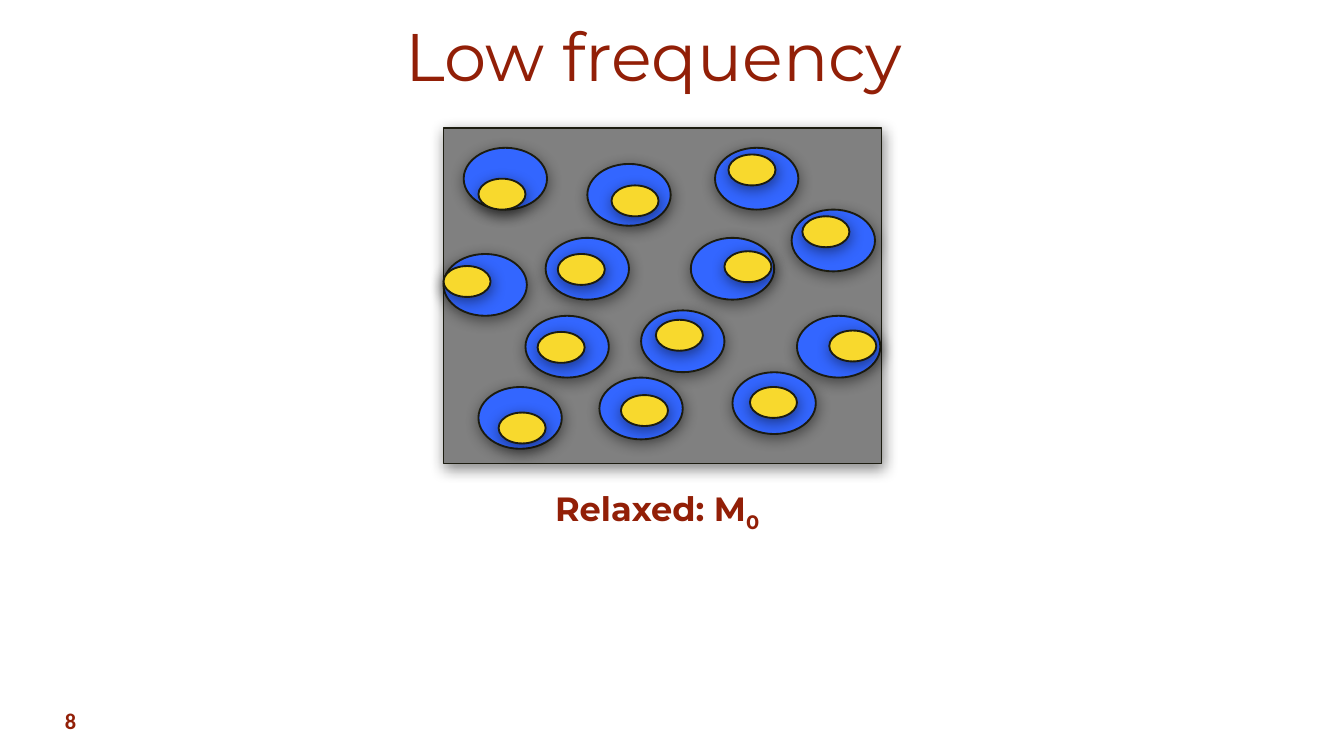
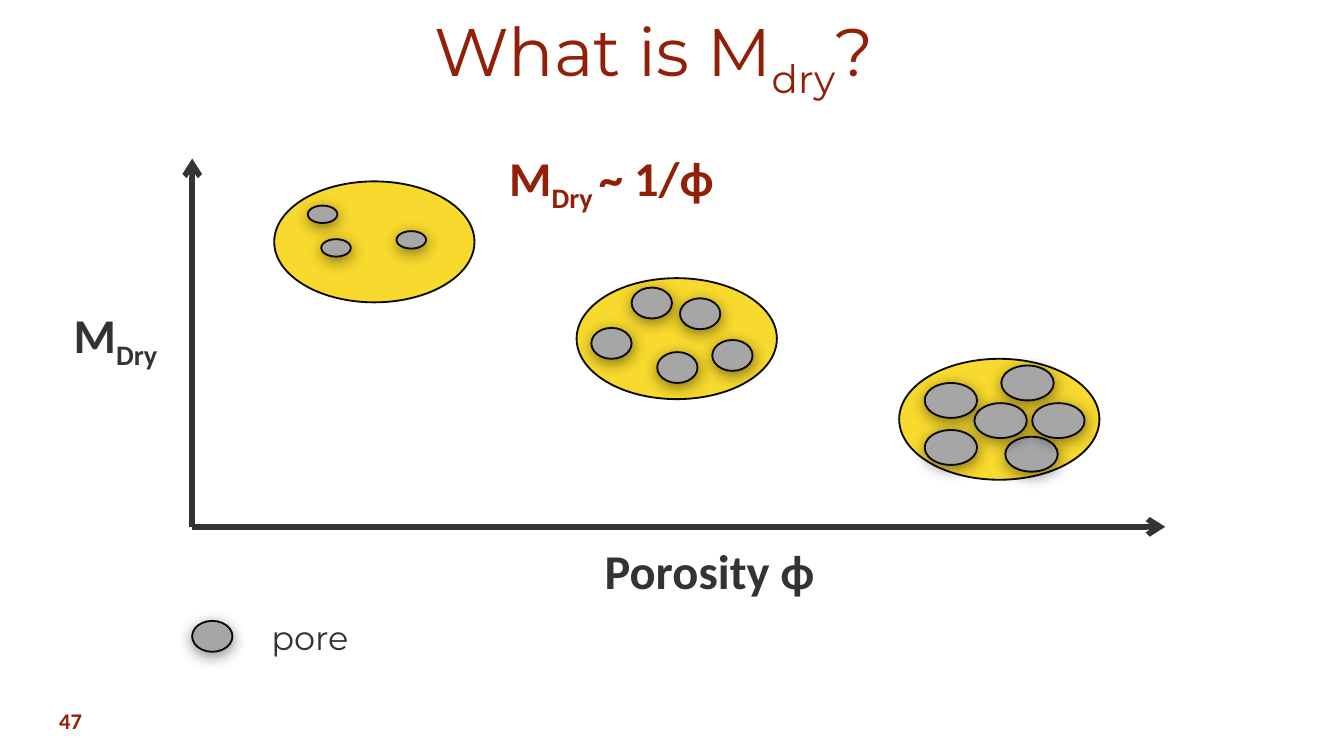
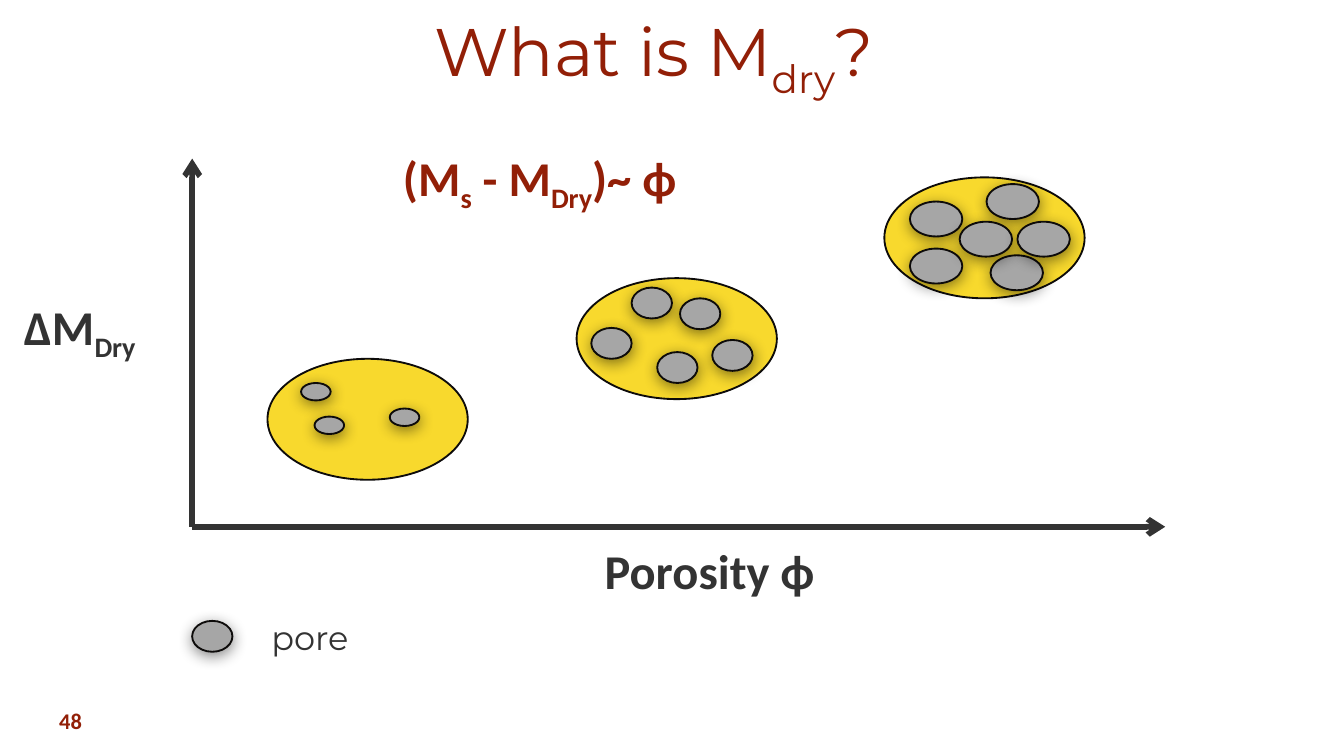
from dataclasses import dataclass

from lxml.etree import SubElement
from pptx import Presentation
from pptx.dml.color import RGBColor
from pptx.enum.shapes import MSO_CONNECTOR, MSO_SHAPE
from pptx.enum.text import MSO_ANCHOR, MSO_AUTO_SIZE, PP_ALIGN
from pptx.oxml.ns import qn
from pptx.util import Inches, Pt

# Grid: square cells, 100 columns across the slide and 56.25 rows down it.
COLUMNS, ROWS = 100, 56.25
CELL = Inches(10) / COLUMNS

RED, DARK, OUTLINE, FRAME_LINE = "921F07", "333333", "0D0B0A", "1C1C10"
YELLOW, BLUE, PORE_GREY, ROCK_GREY = "F8D92D", "3366FF", "A6A6A6", "808080"
HEADING_FONT, LABEL_FONT = "Montserrat", "Calibri"

Size = tuple[float, float]
Point = tuple[float, float]
Box = tuple[float, float, float, float]

TITLE_BOX: Box = (3.8, 0.5, 89.7, 7.2)
NUMBER_BOX: Box = (1.9, 52.1, 6.7, 3)
ROCK_BOX: Box = (33, 9.5, 32.6, 25)
GRAIN_SIZE: Size = (14.9, 9)
BUBBLE_SIZE: Size = (6.2, 4.6)
CORE_SIZE: Size = (3.5, 2.3)
MEDIUM_PORE: Size = (3, 2.3)
ORIGIN: Point = (14.3, 39.2)
AXIS_ENDS: list[Point] = [(86.7, 39.2), (14.3, 11.8)]


@dataclass
class Bubble:
    """A blue bubble and the offset of the yellow core inside it."""
    left: float
    top: float
    core: Point


@dataclass
class Grain:
    """Pores of one size, placed relative to the grain's corner."""
    pore_size: Size
    pores: list[Point]


@dataclass
class Label:
    """Text whose odd-numbered pieces are subscripts."""
    box: Box
    pieces: list[str]
    wrap: bool = False


@dataclass
class Plot:
    number: int
    vertical_label: Label
    relation: Label
    grain_corners: list[Point]


BUBBLES = [
    Bubble(34.5, 11, (1.1, 2.3)), Bubble(43.7, 12.2, (1.8, 1.6)),
    Bubble(40.6, 17.7, (0.9, 1.2)), Bubble(33, 18.9, (0, 0.9)),
    Bubble(53.2, 11, (1, 0.5)), Bubble(39.1, 23.5, (0.9, 1.2)),
    Bubble(47.7, 23.1, (1.1, 0.7)), Bubble(51.4, 17.7, (2.5, 1)),
    Bubble(59.3, 23.5, (2.4, 1.1)), Bubble(35.6, 28.8, (1.5, 1.9)),
    Bubble(44.6, 28.1, (1.6, 1.3)), Bubble(54.5, 27.7, (1.3, 1.1)),
    Bubble(58.9, 15.6, (0.8, 0.5)),
]

GRAINS = [
    Grain((2.2, 1.3), [(2.5, 1.8), (3.5, 4.3), (9.1, 3.7)]),
    Grain(MEDIUM_PORE, [(10.1, 4.6), (6, 5.5), (1.1, 3.7), (4.1, 0.7), (7.7, 1.5)]),
    Grain((3.9, 2.6), [(1.9, 1.8), (7.9, 5.8), (1.9, 5.3), (7.6, 0.5),
                       (5.6, 3.3), (9.9, 3.3)]),
]

PLOTS = [
    Plot(47, Label((4.5, 22.2, 9.8, 5.4), ["M", "Dry"]),
         Label((36.9, 10.5, 24.2, 5.4), ["M", "Dry ", "~ 1/ϕ"], wrap=True),
         [(20.4, 13.5), (42.9, 20.7), (66.9, 26.7)]),
    Plot(48, Label((0.8, 21.6, 13.5, 5.4), ["ΔM", "Dry"]),
         Label((29, 10.5, 28, 5.4), ["(M", "s", " - M", "Dry", ")~ ϕ"], wrap=True),
         [(19.9, 26.7), (42.9, 20.7), (65.8, 13.2)]),
]


def cells(*counts: float) -> list[int]:
    return [round(count * CELL) for count in counts]


def rgb(color: str) -> RGBColor:
    return RGBColor.from_string(color)


def write(shape, pieces: list[str], *, size: float, color: str, font: str = LABEL_FONT,
          bold: bool = False, align=PP_ALIGN.LEFT, anchor=MSO_ANCHOR.TOP,
          wrap: bool = True, grow: bool = False) -> None:
    """Fill the shape with one paragraph; odd-numbered pieces are subscripts."""
    frame = shape.text_frame
    frame.word_wrap = wrap
    frame.auto_size = MSO_AUTO_SIZE.SHAPE_TO_FIT_TEXT if grow else MSO_AUTO_SIZE.NONE
    frame.vertical_anchor = anchor
    paragraph = frame.paragraphs[0]
    paragraph.alignment = align
    for index, piece in enumerate(pieces):
        run = paragraph.add_run()
        run.text = piece
        run.font.name, run.font.size, run.font.bold = font, Pt(size), bold
        run.font.color.rgb = rgb(color)
        if index % 2:
            run._r.get_or_add_rPr().set("baseline", "-25000")


def add_label(slide, label: Label, **text_format) -> None:
    write(slide.shapes.add_textbox(*cells(*label.box)), label.pieces,
          wrap=label.wrap, grow=True, **text_format)


def add_slide(presentation, title: list[str], number: int):
    """Add a slide with the shared title style and slide number."""
    slide = presentation.slides.add_slide(presentation.slide_layouts[5])
    heading = slide.shapes.title
    heading.left, heading.top, heading.width, heading.height = cells(*TITLE_BOX)
    centred = {"align": PP_ALIGN.CENTER, "anchor": MSO_ANCHOR.MIDDLE, "color": RED}
    write(heading, title, size=36, font=HEADING_FONT, **centred)
    write(slide.shapes.add_textbox(*cells(*NUMBER_BOX)), [str(number)],
          size=12, bold=True, **centred)
    return slide


def add_shadow(shape) -> None:
    effects = shape._element.spPr.find(qn("a:effectLst"))
    shadow = SubElement(effects, qn("a:outerShdw"), blurRad=str(Pt(8)),
                        dist=str(Pt(2)), dir=str(80 * 60000), rotWithShape="0")
    color = SubElement(shadow, qn("a:srgbClr"), val="000000")
    SubElement(color, qn("a:alpha"), val="45000")


def add_form(slide, box: Box, fill: str, line: str = OUTLINE, shadow: bool = True,
             preset=MSO_SHAPE.OVAL) -> None:
    shape = slide.shapes.add_shape(preset, *cells(*box))
    shape.shadow.inherit = False
    shape.fill.solid()
    shape.fill.fore_color.rgb = rgb(fill)
    shape.line.color.rgb = rgb(line)
    shape.line.width = Pt(1)
    if shadow:
        add_shadow(shape)


def add_axis(slide, end: Point) -> None:
    axis = slide.shapes.add_connector(MSO_CONNECTOR.STRAIGHT, *cells(*ORIGIN, *end))
    axis.line.color.rgb = rgb(DARK)
    axis.line.width = Pt(3)
    properties = axis._element.spPr
    SubElement(properties.find(qn("a:ln")), qn("a:tailEnd"), type="arrow")
    SubElement(properties, qn("a:effectLst"))


def add_grain(slide, grain: Grain, corner: Point) -> None:
    left, top = corner
    add_form(slide, (left, top, *GRAIN_SIZE), YELLOW, shadow=False)
    for across, down in grain.pores:
        add_form(slide, (left + across, top + down, *grain.pore_size), PORE_GREY)


def build_frequency_slide(presentation) -> None:
    slide = add_slide(presentation, ["Low frequency"], 8)
    add_label(slide, Label((39.7, 35.8, 18.4, 4), ["Relaxed: M", "0"]), size=18,
              color=RED, font=HEADING_FONT, bold=True, align=PP_ALIGN.CENTER)
    add_form(slide, ROCK_BOX, ROCK_GREY, FRAME_LINE, preset=MSO_SHAPE.RECTANGLE)
    for bubble in BUBBLES:
        add_form(slide, (bubble.left, bubble.top, *BUBBLE_SIZE), BLUE, FRAME_LINE)
    for bubble in BUBBLES:
        across, down = bubble.core
        add_form(slide, (bubble.left + across, bubble.top + down, *CORE_SIZE),
                 YELLOW, FRAME_LINE)


def build_plot_slide(presentation, plot: Plot) -> None:
    slide = add_slide(presentation, ["What is M", "dry", "?"], plot.number)
    for end in AXIS_ENDS:
        add_axis(slide, end)
    horizontal_label = Label((44, 39.8, 19.1, 5.4), ["Porosity ϕ"])
    for label, color in ((horizontal_label, DARK), (plot.vertical_label, DARK),
                         (plot.relation, RED)):
        add_label(slide, label, size=26, color=color, bold=True)
    for grain, corner in zip(GRAINS, plot.grain_corners):
        add_grain(slide, grain, corner)
    add_form(slide, (14.3, 46.2, *MEDIUM_PORE), PORE_GREY)
    add_label(slide, Label((19.2, 45.4, 8.2, 4), ["pore"]),
              size=18, color=DARK, font=HEADING_FONT)


def main() -> None:
    presentation = Presentation()
    presentation.slide_width, presentation.slide_height = cells(COLUMNS, ROWS)
    build_frequency_slide(presentation)
    for plot in PLOTS:
        build_plot_slide(presentation, plot)
    presentation.save("out.pptx")


if __name__ == "__main__":
    main()
